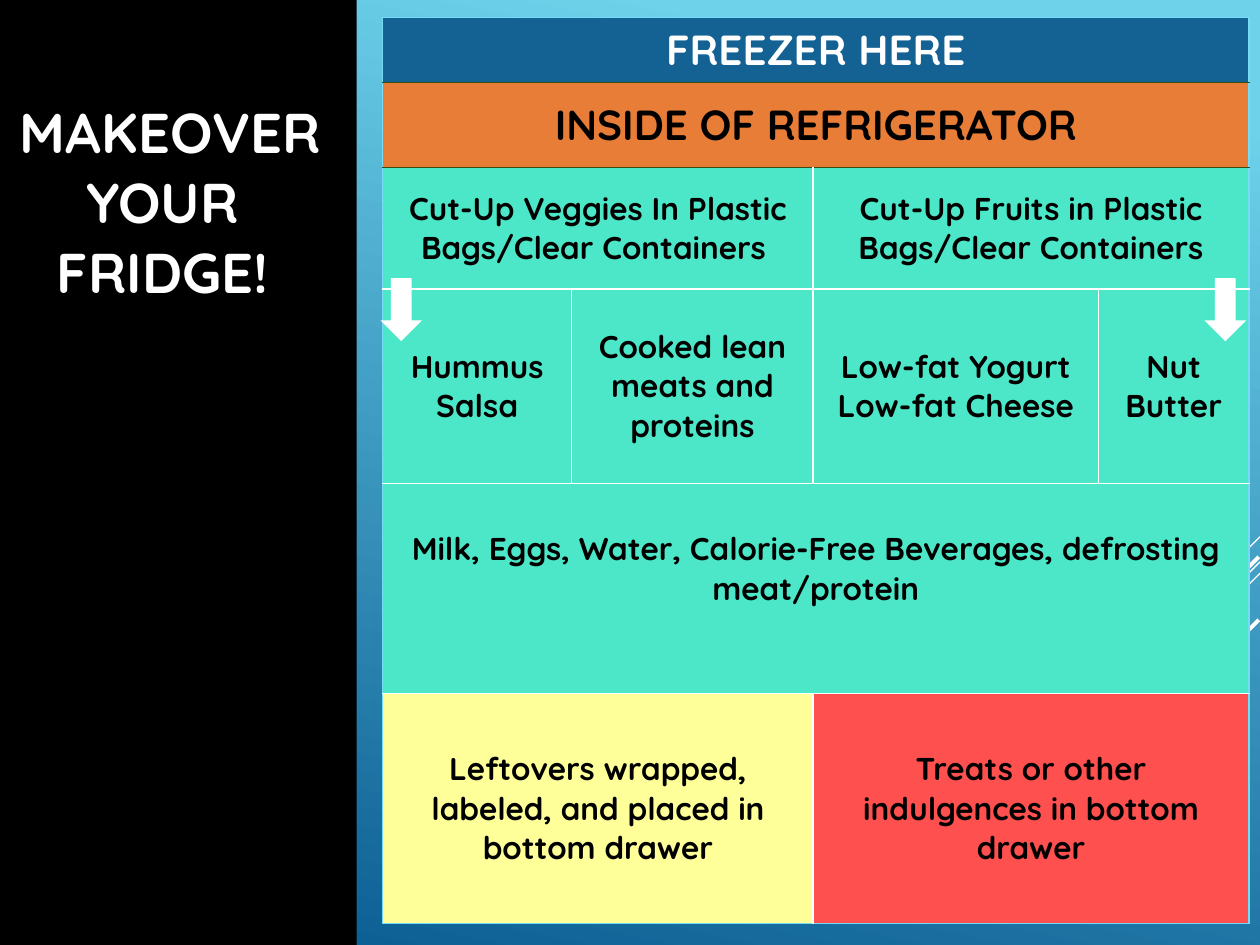
from lxml import etree
from pptx import Presentation
from pptx.dml.color import RGBColor
from pptx.enum.shapes import MSO_CONNECTOR, MSO_SHAPE
from pptx.enum.text import MSO_ANCHOR, PP_ALIGN
from pptx.oxml.ns import qn
from pptx.util import Pt

HUES = {
    "white": "FFFFFF", "black": "000000", "sky": "6ED2EB", "deep": "06588E",
    "navy": "146194", "orange": "E87D37", "mint": "4BE7C8", "lemon": "FFFF99",
    "red": "FF5050", "cyan": "76DBF4", "olive": "354F10",
}
FONT = "Quicksand"
COLS = [108, 138, 163, 86]
ROWS = [37, 48.5, 69.5, 111, 120, 131.5]

# Row, first column, columns spanned, fill, text
CELLS = [
    (0, 0, 4, "navy", "FREEZER HERE"),
    (1, 0, 4, "orange", "INSIDE OF REFRIGERATOR"),
    (2, 0, 2, "mint", "Cut-Up Veggies In Plastic Bags/Clear Containers "),
    (2, 2, 2, "mint", "Cut-Up Fruits in Plastic Bags/Clear Containers"),
    (3, 0, 1, "mint", "Hummus\nSalsa"),
    (3, 1, 1, "mint", "Cooked lean meats and proteins"),
    (3, 2, 1, "mint", "Low-fat Yogurt\nLow-fat Cheese"),
    (3, 3, 1, "mint", "Nut Butter"),
    (4, 0, 4, "mint", "Milk, Eggs, Water, Calorie-Free Beverages, defrosting meat/protein"),
    (5, 0, 2, "lemon", "Leftovers wrapped, labeled, and placed in bottom drawer"),
    (5, 2, 2, "red", "Treats or other indulgences in bottom drawer"),
]

# Start x, start y, run down and left at 45 degrees, width
RAYS = [
    (720, 306.7, 59.8, 0.75), (720, 321.1, 194.8, 0.75), (720, 327.6, 123.8, 0.75),
    (719.3, 318.2, 113, 2.25), (719.3, 354.2, 82, 2.25),
]


def tint(name):
    return RGBColor.from_string(HUES[name])


def put(frame, text, size=18, color="black", lead=None):
    frame.word_wrap = True
    frame.text = text
    for para in frame.paragraphs:
        para.alignment = PP_ALIGN.CENTER
        if lead:
            para.line_spacing = Pt(lead)
        font = para.font
        font.name, font.size, font.bold = FONT, Pt(size), True
        font.color.rgb = tint(color)


def shape(slide, kind, x, y, w, h, color):
    item = slide.shapes.add_shape(kind, Pt(x), Pt(y), Pt(w), Pt(h))
    item.shadow.inherit = False
    item.fill.solid()
    item.fill.fore_color.rgb = tint(color)
    item.line.fill.background()


def ray(slide, x, y, run, width):
    line = slide.shapes.add_connector(
        MSO_CONNECTOR.STRAIGHT, Pt(x), Pt(y), Pt(x - run), Pt(y + run))
    line.line.color.rgb = tint("white")
    line.line.width = Pt(width)
    etree.SubElement(line._element.spPr, qn("a:effectLst"))


def edge(cell, side, color):
    props = cell._tc.get_or_add_tcPr()
    line = etree.SubElement(props, qn("a:ln" + side), w=str(Pt(1)))
    fill = etree.SubElement(line, qn("a:solidFill"))
    etree.SubElement(fill, qn("a:srgbClr"), val=HUES[color])


def rule(row):
    """Colour of the horizontal rule above a row."""
    if row in (0, len(ROWS)):
        return "cyan"
    return "olive" if row < 3 else "white"


def fill_cell(grid, row, col, span, color, text):
    cell, last = grid.cell(row, col), col + span
    if span > 1:
        cell.merge(grid.cell(row, last - 1))
    for pos in range(col, last):
        part = grid.cell(row, pos)
        if pos == col:
            edge(part, "L", "white" if col else "cyan")
            edge(part, "R", "white" if last < len(COLS) else "cyan")
        edge(part, "T", rule(row))
        edge(part, "B", rule(row + 1))
        part.fill.solid()
        part.fill.fore_color.rgb = tint(color)
    cell.vertical_anchor = MSO_ANCHOR.MIDDLE
    put(cell.text_frame, text, size=24 if row < 2 else 18,
        color="black" if row else "white")


def fridge(slide):
    frame = slide.shapes.add_table(
        len(ROWS), len(COLS), Pt(218.7), Pt(10), Pt(sum(COLS)), Pt(sum(ROWS)))
    grid = frame.table
    for col, width in zip(grid.columns, COLS):
        col.width = Pt(width)
    for row, height in zip(grid.rows, ROWS):
        row.height = Pt(height)
    for item in CELLS:
        fill_cell(grid, *item)
    # Lift the drinks text above the middle of its shelf
    grid.cell(4, 0).margin_bottom = Pt(26)


def title(slide):
    box = slide.shapes.add_textbox(Pt(-12.2), Pt(48.2), Pt(210.2), Pt(157))
    frame = box.text_frame
    frame.vertical_anchor = MSO_ANCHOR.MIDDLE
    frame.margin_bottom = Pt(28.6)
    put(frame, " MAKEOVER YOUR FRIDGE!", size=32, color="white", lead=40)


def paint(slide):
    fill = slide.background.fill
    fill.gradient()
    fill.gradient_angle = 258
    for stop, (spot, color) in zip(fill.gradient_stops, [(0.1, "sky"), (1, "deep")]):
        stop.position = spot
        stop.color.rgb = tint(color)


def main():
    deck = Presentation()
    deck.slide_width, deck.slide_height = Pt(720), Pt(540)
    slide = deck.slides.add_slide(deck.slide_layouts[6])

    # Backdrop
    paint(slide)
    for item in RAYS:
        ray(slide, *item)
    shape(slide, MSO_SHAPE.RECTANGLE, 0, 0, 203.8, 540, "black")

    # Fridge shelves and arrows
    fridge(slide)
    for x in (688.3, 217.4):
        shape(slide, MSO_SHAPE.DOWN_ARROW, x, 159, 23.8, 36, "white")

    title(slide)
    deck.save("out.pptx")


if __name__ == "__main__":
    main()
